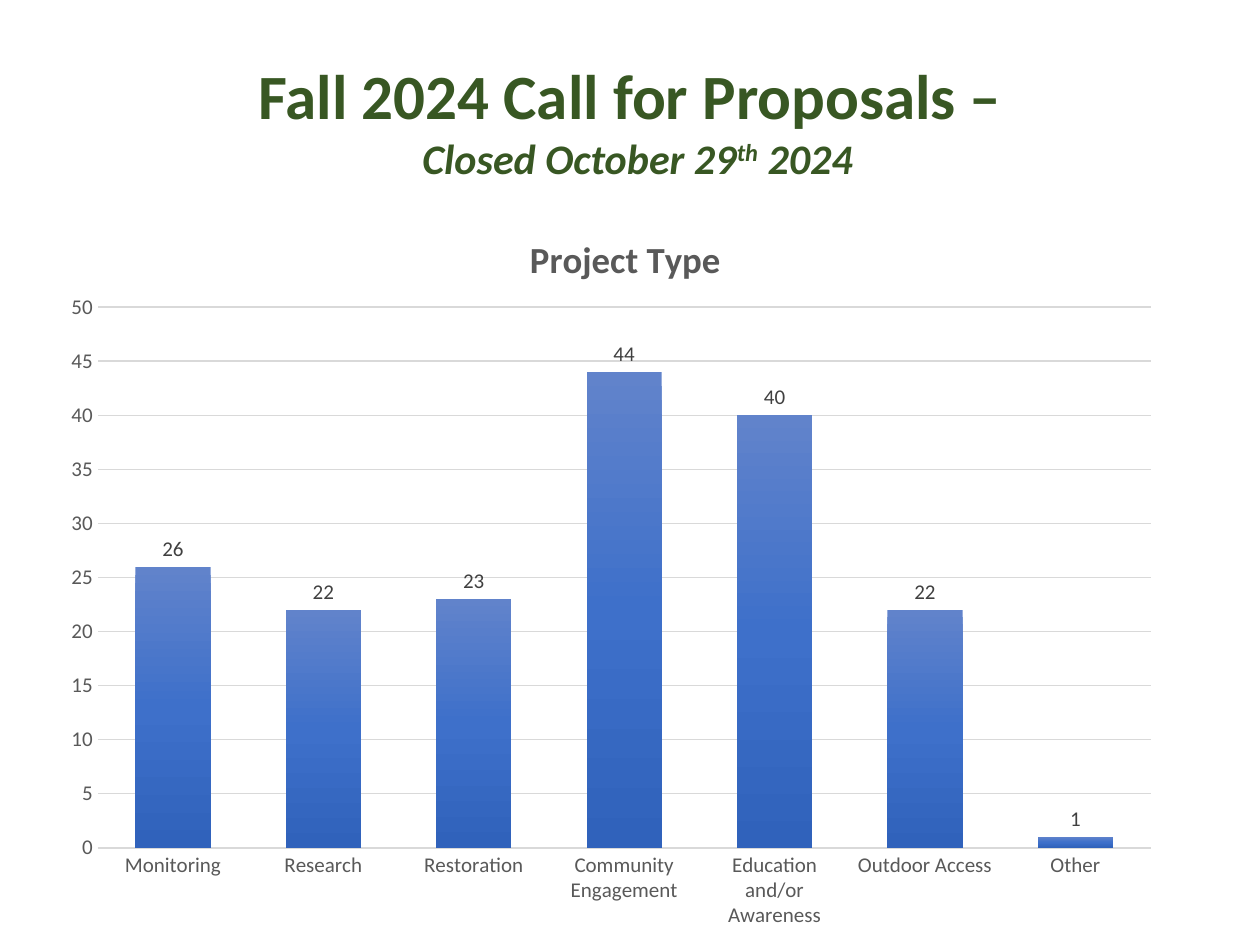
import pptx
import pptx.chart.data
import pptx.dml.color
import pptx.enum.chart
import pptx.enum.text
import pptx.oxml
import pptx.util
from pptx.oxml.ns import nsdecls

Pt = pptx.util.Pt

FONT = "Calibri"
HEADING = [
    (36, False, [("Fall 2024 Call for Proposals – ", 0)]),
    (24, True, [("Closed October 29", 0), ("th", 30), (" 2024", 0)]),
]
HEADING_BOX = (30.24, 28.8, 668.16, 79.92)
CHART_BOX = (30.24, 108.72, 640.08, 418.32)
CHART_TITLE = "Project Type"
PROJECTS = {
    "Monitoring": 26,
    "Research": 22,
    "Restoration": 23,
    "Community Engagement": 44,
    "Education and/or Awareness": 40,
    "Outdoor Access": 22,
    "Other": 1,
}
BAR_GRADIENT = [(0, "6183CB"), (50, "3E70CA"), (100, "3062BB")]
TITLE_POSITION = {"x": 0.42, "y": 0.05}
PLOT_POSITION = {"x": 0.04, "y": 0.16, "w": 0.94, "h": 0.74}
GREEN, GREY, DARK_GREY, LIGHT_GREY = "385723", "595959", "404040", "D9D9D9"


def color(hex_text):
    return pptx.dml.color.RGBColor.from_string(hex_text)


def style_font(font, size, hex_text, bold=False, italic=False):
    font.name = FONT
    font.size = Pt(size)
    font.bold = bold
    font.italic = italic
    font.color.rgb = color(hex_text)


def layout_xml(position, inner=False):
    """Manual chart layout in fractions of the chart area."""
    target = '<c:layoutTarget val="inner"/>' if inner else ""
    modes = "".join(f'<c:{key}Mode val="edge"/>' for key in "xy")
    values = "".join(f'<c:{key} val="{value}"/>' for key, value in position.items())
    return pptx.oxml.parse_xml(
        f'<c:layout {nsdecls("c")}><c:manualLayout>{target}{modes}{values}'
        "</c:manualLayout></c:layout>"
    )


def set_layout(parent, layout, index):
    for old in parent.findall(layout.tag):
        parent.remove(old)
    parent.insert(index, layout)


def fill_bars(series):
    """Vertical gradient with three stops."""
    stops = "".join(
        f'<a:gs pos="{position * 1000}"><a:srgbClr val="{hex_text}"/></a:gs>'
        for position, hex_text in BAR_GRADIENT
    )
    series.format.fill.background()
    properties = series.format.fill._xPr
    gradient = pptx.oxml.parse_xml(
        f'<a:gradFill {nsdecls("a")} rotWithShape="1"><a:gsLst>{stops}</a:gsLst>'
        '<a:lin ang="5400000" scaled="0"/></a:gradFill>'
    )
    properties.replace(properties[0], gradient)
    series.format.line.fill.background()


def add_heading(page):
    title = page.shapes.title
    title.left, title.top, title.width, title.height = map(Pt, HEADING_BOX)
    frame = title.text_frame
    frame.word_wrap = True
    frame.auto_size = pptx.enum.text.MSO_AUTO_SIZE.SHAPE_TO_FIT_TEXT
    frame.vertical_anchor = pptx.enum.text.MSO_ANCHOR.TOP
    for index, (size, italic, spans) in enumerate(HEADING):
        para = frame.add_paragraph() if index else frame.paragraphs[0]
        para.alignment = pptx.enum.text.PP_ALIGN.CENTER
        para.space_before = Pt(0)
        for text, baseline in spans:
            span = para.add_run()
            span.text = text
            style_font(span.font, size, GREEN, bold=True, italic=italic)
            if baseline:
                span.font._element.set("baseline", str(baseline * 1000))


def add_project_chart(page):
    data = pptx.chart.data.CategoryChartData()
    data.categories = list(PROJECTS)
    data.add_series("Series 1", list(PROJECTS.values()))
    kind = pptx.enum.chart.XL_CHART_TYPE.COLUMN_CLUSTERED
    chart = page.shapes.add_chart(kind, *map(Pt, CHART_BOX), data).chart
    style_font(chart.font, 10, "000000")
    chart.has_legend = False

    chart.has_title = True
    chart.chart_title.include_in_layout = False
    frame = chart.chart_title.text_frame
    frame.text = CHART_TITLE
    style_font(frame.paragraphs[0].runs[0].font, 21, GREY, bold=True)
    set_layout(chart.chart_title._element, layout_xml(TITLE_POSITION), 1)
    plot_area = chart._chartSpace.chart.plotArea
    set_layout(plot_area, layout_xml(PLOT_POSITION, inner=True), 0)

    for axis in (chart.category_axis, chart.value_axis):
        axis.major_tick_mark = pptx.enum.chart.XL_TICK_MARK.NONE
        axis.minor_tick_mark = pptx.enum.chart.XL_TICK_MARK.NONE
        style_font(axis.tick_labels.font, 12, GREY)
    category_line = chart.category_axis.format.line
    grid_line = chart.value_axis.major_gridlines.format.line
    for line, width in ((category_line, 1), (grid_line, 0.75)):
        line.color.rgb = color(LIGHT_GREY)
        line.width = Pt(width)
    chart.value_axis.format.line.fill.background()
    chart.value_axis.minimum_scale = 0
    chart.value_axis.maximum_scale = 50
    chart.value_axis.major_unit = 5

    plot = chart.plots[0]
    plot.gap_width = 100
    plot.overlap = -24
    plot.vary_by_categories = False
    series = plot.series[0]
    fill_bars(series)
    labels = series.data_labels
    labels.show_value = True
    labels.position = pptx.enum.chart.XL_LABEL_POSITION.OUTSIDE_END
    style_font(labels.font, 12, DARK_GREY)


def main():
    deck = pptx.Presentation()
    deck.slide_width, deck.slide_height = Pt(720), Pt(540)
    page = deck.slides.add_slide(deck.slide_layouts.get_by_name("Title Only"))
    add_heading(page)
    add_project_chart(page)
    deck.save("out.pptx")


if __name__ == "__main__":
    main()
